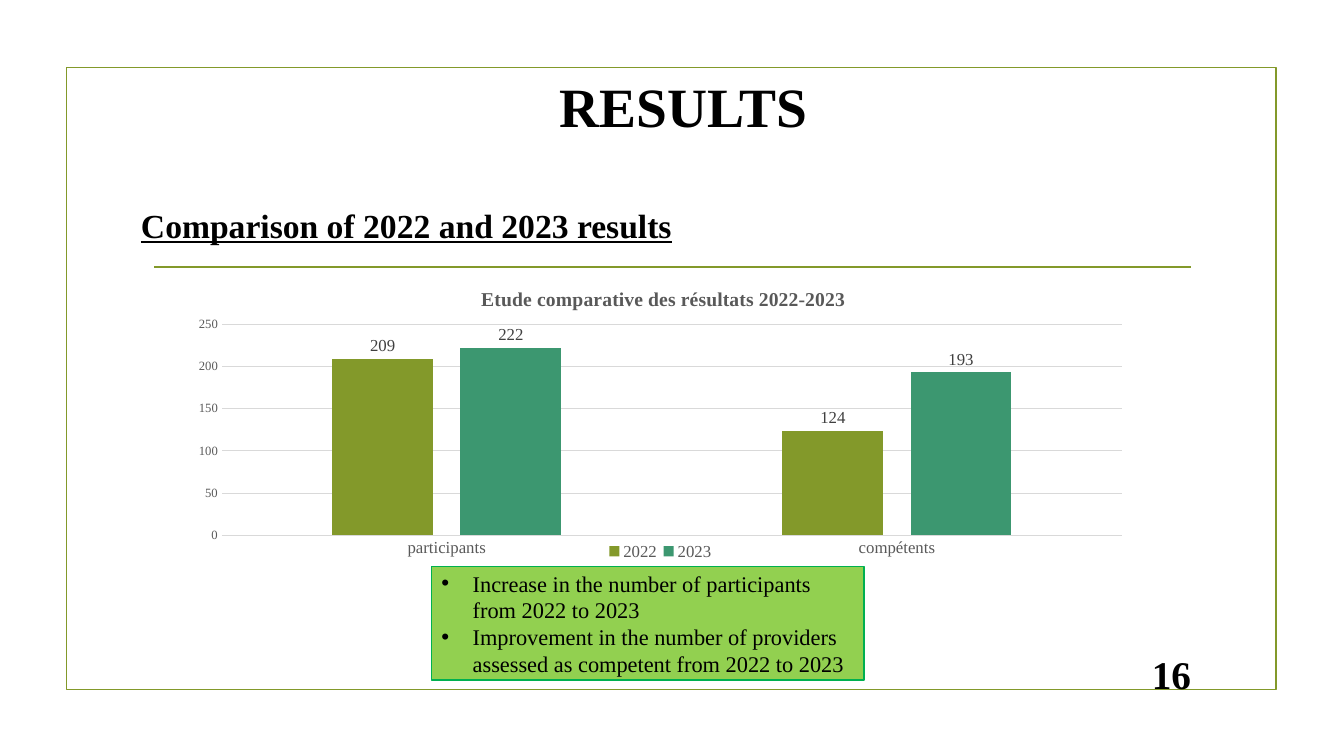
from lxml import etree
from pptx import Presentation
from pptx.chart.data import CategoryChartData
from pptx.dml.color import RGBColor
from pptx.enum.chart import XL_CHART_TYPE, XL_LABEL_POSITION, XL_LEGEND_POSITION, XL_TICK_MARK
from pptx.enum.shapes import MSO_CONNECTOR, MSO_SHAPE
from pptx.enum.text import MSO_ANCHOR, PP_ALIGN
from pptx.oxml.ns import qn
from pptx.util import Inches, Pt

COLUMN = XL_CHART_TYPE.COLUMN_CLUSTERED
ABOVE = XL_LABEL_POSITION.OUTSIDE_END
BOTTOM = XL_LEGEND_POSITION.BOTTOM
NO_TICK = XL_TICK_MARK.NONE
STRAIGHT = MSO_CONNECTOR.STRAIGHT
RECT = MSO_SHAPE.RECTANGLE
MIDDLE = MSO_ANCHOR.MIDDLE
LEFT, CENTER, RIGHT = PP_ALIGN.LEFT, PP_ALIGN.CENTER, PP_ALIGN.RIGHT

FACE = "Times New Roman"
OLIVE, TEAL, BLACK = "83992A", "3C9770", "000000"
GRAY, DARK, PALE = "595959", "404040", "D9D9D9"
LIME, GREEN = "92D050", "00B050"

NOTES = [
    "Increase in the number of participants from 2022 to 2023",
    "Improvement in the number of providers assessed as competent from 2022 to 2023",
]
YEARS = [("2022", (209, 124), OLIVE), ("2023", (222, 193), TEAL)]


def color(code):
    return RGBColor.from_string(code)


def style(font, size, code=BLACK, bold=False, under=False):
    font.name = FACE
    font.size = Pt(size)
    font.color.rgb = color(code)
    font.bold = bold
    font.underline = under


def stroke(line, code, width):
    line.color.rgb = color(code)
    line.width = Pt(width)


def box(slide, at, fill, edge):
    shape = slide.shapes.add_shape(RECT, *map(Inches, at))
    shape.shadow.inherit = False
    if fill:
        shape.fill.solid()
        shape.fill.fore_color.rgb = color(fill)
    else:
        shape.fill.background()
    stroke(shape.line, edge, 1.25)
    return shape


def rule(slide, left, right, top):
    line = slide.shapes.add_connector(
        STRAIGHT, Inches(left), Inches(top), Inches(right), Inches(top))
    stroke(line.line, OLIVE, 1.25)
    etree.SubElement(line._element.spPr, qn("a:effectLst"))


def write(shape, text, size, align, under=False):
    frame = shape.text_frame
    frame.word_wrap = True
    frame.vertical_anchor = MIDDLE
    frame.text = text
    para = frame.paragraphs[0]
    para.alignment = align
    style(para.font, size, bold=True, under=under)


def label(slide, at, text, size, align, under=False):
    write(slide.shapes.add_textbox(*map(Inches, at)), text, size, align, under)


def title(slide, at, text):
    shape = slide.shapes.title
    shape.left, shape.top, shape.width, shape.height = map(Inches, at)
    write(shape, text, 39.6, CENTER)


def bullets(shape, items):
    frame = shape.text_frame
    frame.word_wrap = True
    frame.vertical_anchor = MIDDLE
    frame.text = "\n".join(items)
    for para in frame.paragraphs:
        props = para._p.get_or_add_pPr()
        props.set("marL", str(Inches(0.31)))
        props.set("indent", str(-Inches(0.31)))
        etree.SubElement(props, qn("a:buFont"), typeface="Arial")
        etree.SubElement(props, qn("a:buChar"), char="•")
        para.alignment = LEFT
        style(para.font, 16)


def place(parent, index, inner=False, **spots):
    layout = parent.find(qn("c:layout"))
    if layout is None:
        layout = etree.Element(qn("c:layout"))
        parent.insert(index, layout)
    manual = etree.SubElement(layout, qn("c:manualLayout"))
    if inner:
        etree.SubElement(manual, qn("c:layoutTarget"), val="inner")
    for mode in ("xMode", "yMode"):
        etree.SubElement(manual, qn("c:" + mode), val="edge")
    for name, value in spots.items():
        etree.SubElement(manual, qn("c:" + name), val=str(value))


def axes(chart):
    cat, val = chart.category_axis, chart.value_axis
    for axis, size in ((cat, 12), (val, 9)):
        axis.major_tick_mark = axis.minor_tick_mark = NO_TICK
        style(axis.tick_labels.font, size, GRAY)
    stroke(cat.format.line, PALE, 0.75)
    val.format.line.fill.background()
    val.minimum_scale, val.maximum_scale, val.major_unit = 0, 250, 50
    stroke(val.major_gridlines.format.line, PALE, 0.75)


def bars(chart):
    plot = chart.plots[0]
    plot.gap_width, plot.overlap, plot.vary_by_categories = 219, -27, False
    for series, (_, _, code) in zip(plot.series, YEARS):
        series.format.fill.solid()
        series.format.fill.fore_color.rgb = color(code)
        tags = series.data_labels
        tags.show_value = True
        tags.position = ABOVE
        style(tags.font, 12, DARK)


def graph(slide, at):
    data = CategoryChartData()
    data.categories = ["participants", "compétents"]
    for name, values, _ in YEARS:
        data.add_series(name, values)
    chart = slide.shapes.add_chart(COLUMN, *map(Inches, at), data).chart
    style(chart.font, 10)
    chart.has_title = True
    frame = chart.chart_title.text_frame
    frame.text = "Etude comparative des résultats 2022-2023"
    style(frame.paragraphs[0].font, 14, GRAY, bold=True)
    place(chart.chart_title._element, 1, x=0.31, y=0.05)
    chart.has_legend = True
    chart.legend.position = BOTTOM
    chart.legend.include_in_layout = False
    style(chart.legend.font, 12, GRAY)
    place(chart.legend._element, 1, x=0.44, y=0.82, w=0.12, h=0.08)
    area = chart._chartSpace.find(".//" + qn("c:plotArea"))
    place(area, 0, inner=True, x=0.044, y=0.175, w=0.936, h=0.637)
    axes(chart)
    bars(chart)


def main():
    deck = Presentation()
    deck.slide_width, deck.slide_height = Inches(13.33), Inches(7.5)
    slide = deck.slides.add_slide(deck.slide_layouts[5])
    box(slide, (0.66, 0.67, 12, 6.17), None, OLIVE)
    rule(slide, 1.53, 11.81, 2.65)
    title(slide, (1.3, 0.66, 10.96, 0.77), "RESULTS")
    label(slide, (11.32, 6.53, 0.59, 0.31), "16", 28, RIGHT)
    label(slide, (1.3, 1.97, 6.69, 0.52),
          "Comparison of 2022 and 2023 results", 24, LEFT, under=True)
    graph(slide, (1.78, 2.64, 9.54, 3.29))
    bullets(box(slide, (4.28, 5.62, 4.29, 1.13), LIME, GREEN), NOTES)
    deck.save("out.pptx")


if __name__ == "__main__":
    main()
